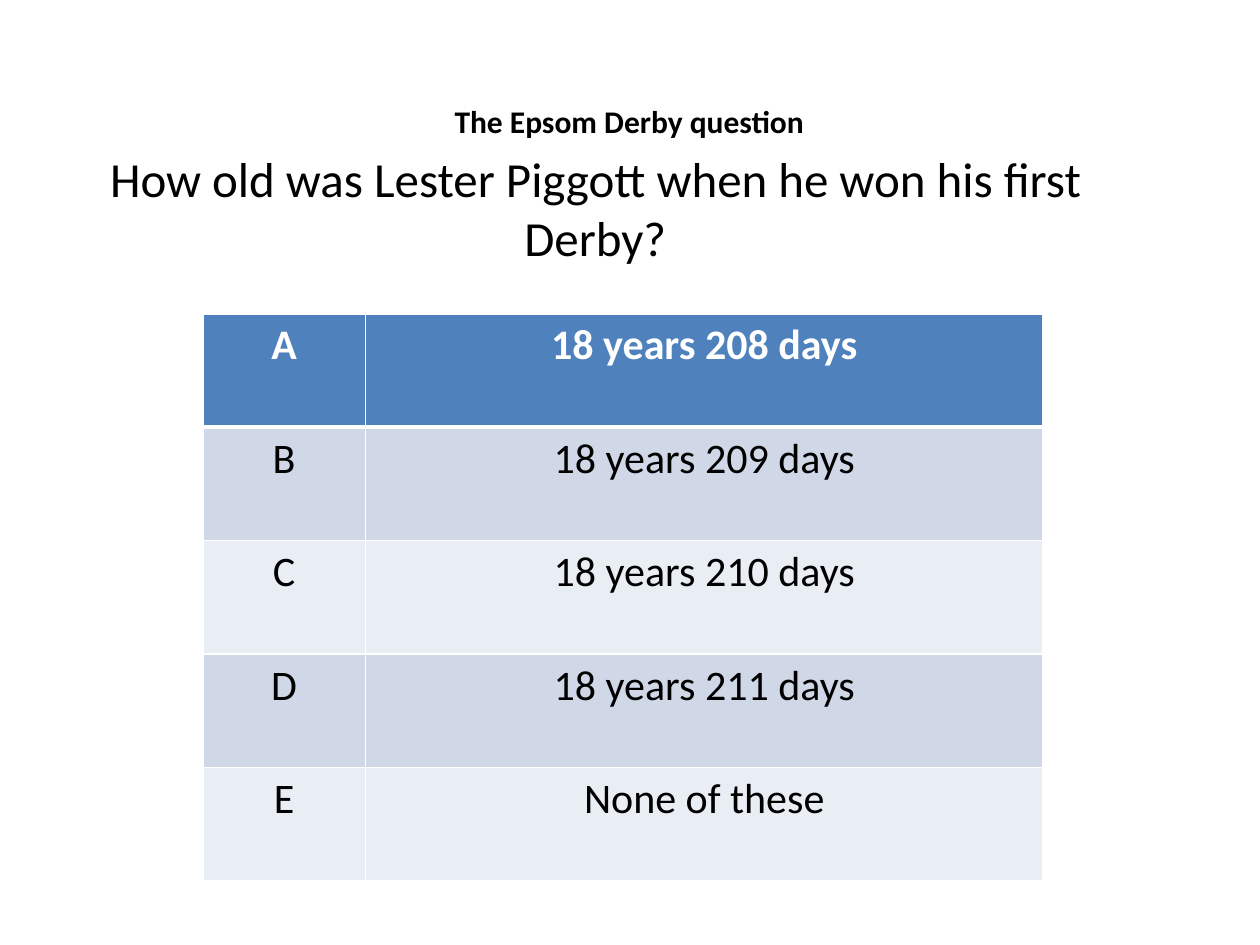
from lxml.etree import SubElement as Sub
from pptx import Presentation
from pptx.dml.color import RGBColor as Rgb
from pptx.enum.text import MSO_ANCHOR as Anchor, MSO_AUTO_SIZE as Auto, PP_ALIGN as Align
from pptx.oxml.ns import qn
from pptx.util import Inches, Pt

HUES = {"head": "4F81BD", "odd": "D0D8E8", "even": "E9EDF4", "ink": "000000", "white": "FFFFFF"}
ROWS = [
    ("A", "18 years 208 days"),
    ("B", "18 years 209 days"),
    ("C", "18 years 210 days"),
    ("D", "18 years 211 days"),
    ("E", "None of these"),
]


def write(frame, text, size=24, bold=False, hue="ink"):
    """Put one centred paragraph into a text frame."""
    para = frame.paragraphs[0]
    para.alignment = Align.CENTER
    run = para.add_run()
    run.text = text
    font = run.font
    font.name, font.size, font.bold = "Calibri", Pt(size), bold
    font.color.rgb = Rgb.from_string(HUES[hue])


def place(shape, left, top, width, height):
    """Set a text shape's box and let its text wrap from the top."""
    shape.left, shape.top = Inches(left), Inches(top)
    shape.width, shape.height = Inches(width), Inches(height)
    frame = shape.text_frame
    frame.word_wrap = True
    frame.auto_size = Auto.NONE
    frame.vertical_anchor = Anchor.TOP
    return frame


def edge(cell, side, width):
    """Draw one white border of a cell."""
    line = Sub(cell._tc.get_or_add_tcPr(), qn(f"a:ln{side}"), w=str(Pt(width)))
    fill = Sub(line, qn("a:solidFill"))
    Sub(fill, qn("a:srgbClr"), val=HUES["white"])


def add_answers(slide):
    """Add the table of lettered answers."""
    box = Inches(1.61), Inches(2.49), Inches(6.67), Inches(4.5)
    table = slide.shapes.add_table(len(ROWS), 2, *box).table
    for col, width in zip(table.columns, (1.29, 5.38)):
        col.width = Inches(width)
    for i, row in enumerate(ROWS):
        top = i == 0
        fill = "head" if top else "odd" if i % 2 else "even"
        for j, text in enumerate(row):
            cell = table.cell(i, j)
            for side in "LRTB":
                thick = (i, side) in ((0, "B"), (1, "T"))
                edge(cell, side, 3 if thick else 1)
            cell.fill.solid()
            cell.fill.fore_color.rgb = Rgb.from_string(HUES[fill])
            write(cell.text_frame, text, bold=top, hue="white" if top else "ink")


def main():
    """Build and save the quiz slide."""
    deck = Presentation()
    deck.slide_width, deck.slide_height = Inches(10), Inches(7.5)
    slide = deck.slides.add_slide(deck.slide_layouts[5])
    add_answers(slide)
    ask = slide.shapes.add_textbox(0, 0, 0, 0)
    write(place(ask, 0.59, 1.13, 8.27, 1.04), "How old was Lester Piggott when he won his first Derby?", size=28)
    title = place(slide.shapes.title, 2.95, 0.76, 4.09, 0.4)
    write(title, "The Epsom Derby question", size=18, bold=True)
    deck.save("out.pptx")


if __name__ == "__main__":
    main()
